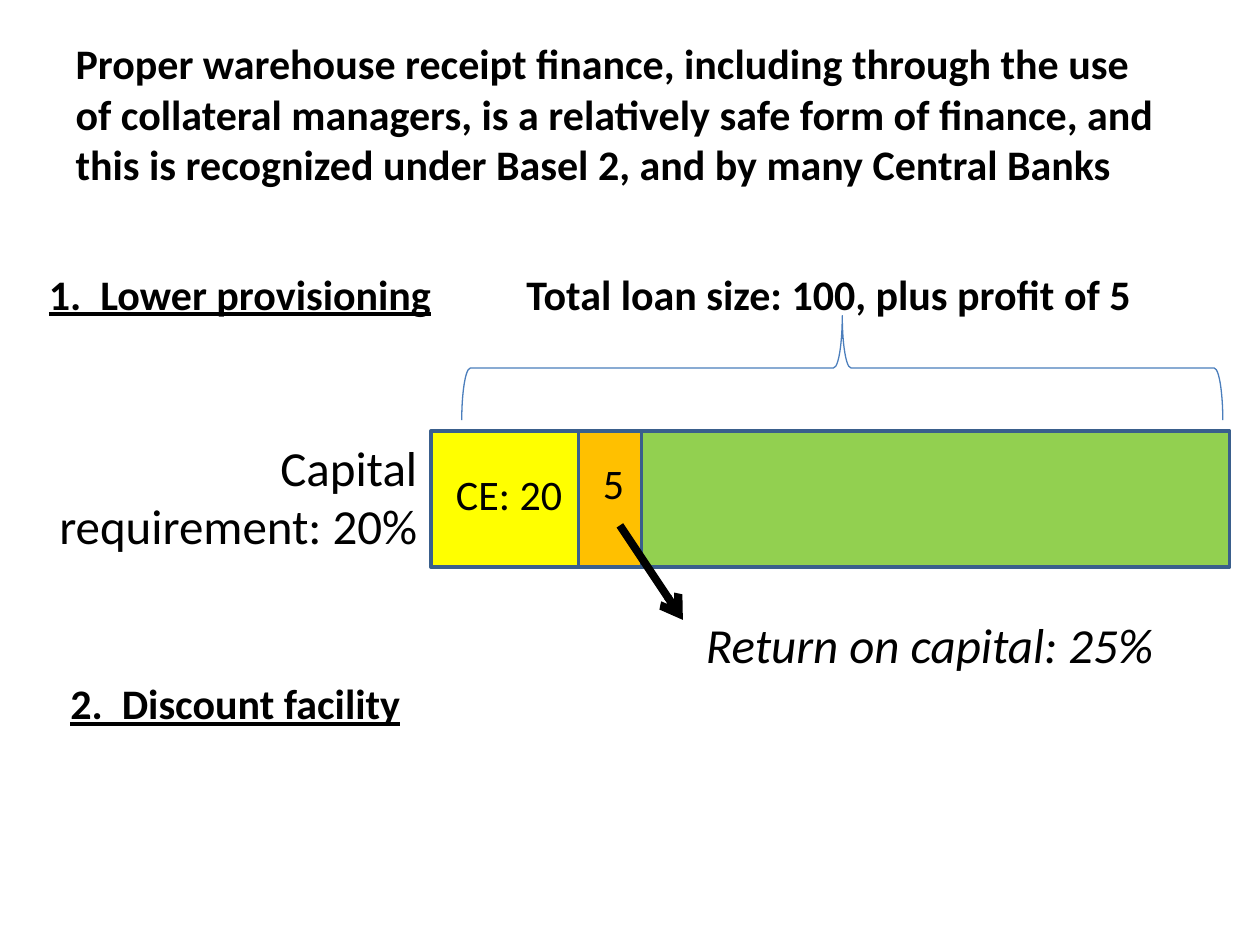
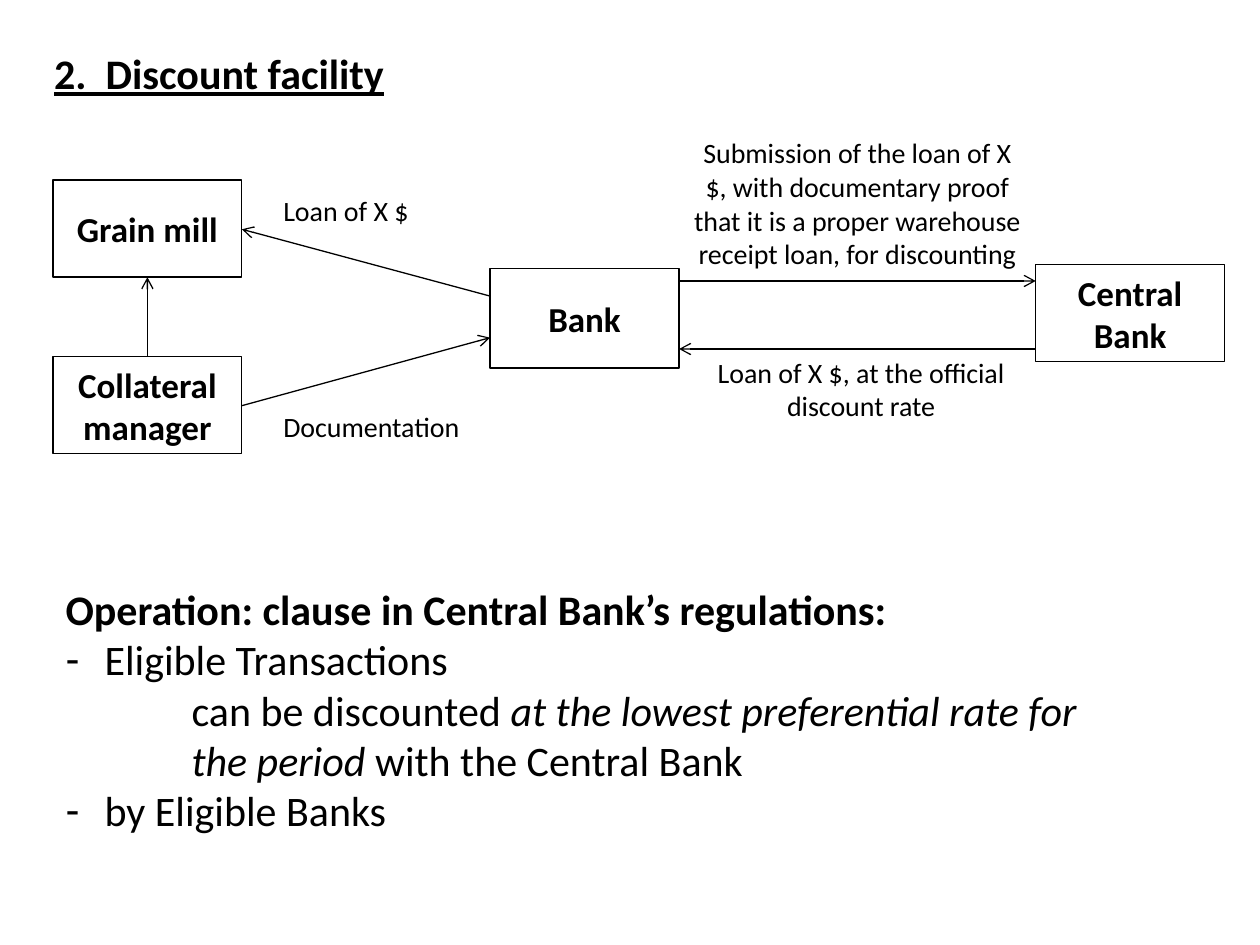
from dataclasses import dataclass

import pptx
import pptx.dml.color
import pptx.enum.shapes
import pptx.enum.text
import pptx.oxml.ns
import pptx.oxml.xmlchemy
import pptx.util
from pptx.util import Inches

FONT = "Calibri"
COLORS = {
    "ink": "000000",
    "equity": "FFFF00",
    "profit": "FFC000",
    "loan": "92D050",
    "bar_line": "3A5F8C",
    "brace": "4B7EBC",
}
ALIGN = pptx.enum.text.PP_ALIGN
ANCHOR = pptx.enum.text.MSO_ANCHOR
SHAPE = pptx.enum.shapes.MSO_SHAPE


@dataclass(frozen=True)
class Box:
    left: float
    top: float
    width: float
    height: float

    def emu(self) -> tuple:
        return tuple(Inches(v) for v in (self.left, self.top, self.width, self.height))


@dataclass(frozen=True)
class TextStyle:
    size: int
    bold: bool = False
    italic: bool = False
    underline: bool = False


@dataclass(frozen=True)
class Label:
    text: str
    box: Box
    style: TextStyle
    align: ALIGN = ALIGN.LEFT


@dataclass(frozen=True)
class Segment:
    width: float
    color: str


@dataclass(frozen=True)
class Arrow:
    start: tuple
    end: tuple
    weight: float = 0.75


@dataclass(frozen=True)
class Clause:
    """A paragraph of (text, italic) phrases; marker is its bullet, if any."""
    phrases: tuple
    margin: float = 0
    marker: str = ""
    bold: bool = False


STATEMENT = TextStyle(24, bold=True)
HEADING = TextStyle(24, bold=True, underline=True)
FIGURE = TextStyle(24)
REMARK = TextStyle(28)
RESULT = TextStyle(28, italic=True)
PARTY = TextStyle(20, bold=True)
FLOW = TextStyle(16)

DISCOUNT_HEADING = "2.  Discount facility"

# Loan bar
BAR_LEFT, BAR_TOP, BAR_HEIGHT = 3.42, 3.42, 1.08
SEGMENTS = (Segment(1.17, "equity"), Segment(0.5, "profit"), Segment(4.67, "loan"))
LOAN_LABELS = (
    Label("Capital requirement: 20%", Box(0.33, 3.42, 3.08, 1.04), REMARK, ALIGN.RIGHT),
    Label("Return on capital: 25%", Box(4, 4.83, 5.25, 0.57), RESULT, ALIGN.RIGHT),
    Label("Total loan size: 100, plus profit of 5", Box(4.08, 2.08, 5.67, 0.5), STATEMENT),
    Label("CE: 20", Box(3.33, 3.67, 1.42, 0.5), FIGURE, ALIGN.CENTER),
    Label("5", Box(4.58, 3.58, 0.58, 0.5), FIGURE, ALIGN.CENTER),
    Label("1.  Lower provisioning", Box(0.29, 2.08, 3.33, 0.5), HEADING),
    Label(DISCOUNT_HEADING, Box(0.46, 5.33, 3.33, 0.5), HEADING),
)

# Discount flow
MILL = Box(0.42, 1.43, 1.5, 0.77)
MANAGER = Box(0.42, 2.83, 1.5, 0.77)
BANK = Box(3.89, 2.13, 1.5, 0.79)
CENTRAL_BANK = Box(8.22, 2.1, 1.5, 0.77)
PARTIES = {
    "Grain mill": MILL,
    "Collateral manager": MANAGER,
    "Bank": BANK,
    "Central Bank": CENTRAL_BANK,
}
LEFT_COLUMN_EDGE = MILL.left + MILL.width
BANK_EDGE = BANK.left + BANK.width
MILL_MIDDLE = MILL.left + MILL.width / 2
FLOWS = (
    Arrow((MILL_MIDDLE, MANAGER.top), (MILL_MIDDLE, MILL.top + MILL.height)),
    Arrow((BANK.left, 2.35), (LEFT_COLUMN_EDGE, 1.82)),
    Arrow((LEFT_COLUMN_EDGE, 3.22), (BANK.left, 2.68)),
    Arrow((BANK_EDGE, 2.23), (CENTRAL_BANK.left, 2.23)),
    Arrow((CENTRAL_BANK.left, 2.77), (BANK_EDGE, 2.77)),
)
FLOW_LABELS = (
    Label("Loan of X $", Box(2.15, 1.49, 1.5, 0.37), FLOW),
    Label("Documentation", Box(2.15, 3.2, 1.82, 0.37), FLOW),
    Label("Submission of the loan of X $, with documentary proof that it is a proper "
          "warehouse receipt loan, for discounting",
          Box(5.39, 1.03, 2.83, 1.18), FLOW, ALIGN.CENTER),
    Label("Loan of X $, at the official discount rate",
          Box(5.42, 2.77, 2.83, 0.64), FLOW, ALIGN.CENTER),
)
CLAUSES = (
    Clause((("Operation: clause in Central Bank’s regulations:", False),), bold=True),
    Clause((("Eligible Transactions", False),), 0.31, "-"),
    Clause((("can be discounted ", False),
            ("at the lowest preferential rate for the period ", True),
            ("with the Central Bank", False)), 1),
    Clause((("by Eligible Banks", False),), 0.31, "-"),
)


def rgb(name: str) -> pptx.dml.color.RGBColor:
    return pptx.dml.color.RGBColor.from_string(COLORS[name])


def place(shape, box: Box) -> None:
    shape.left, shape.top, shape.width, shape.height = box.emu()


def style_paragraph(paragraph, style: TextStyle, align: ALIGN) -> None:
    paragraph.alignment = align
    font = paragraph.font
    font.name = FONT
    font.size = pptx.util.Pt(style.size)
    font.bold = style.bold
    font.underline = style.underline
    if style.italic:
        font.italic = True
    font.color.rgb = rgb("ink")


def set_frame(frame, anchor: ANCHOR = ANCHOR.TOP) -> None:
    frame.word_wrap = True
    frame.auto_size = pptx.enum.text.MSO_AUTO_SIZE.NONE
    frame.vertical_anchor = anchor


def write(frame, text: str, style: TextStyle, align: ALIGN,
          anchor: ANCHOR = ANCHOR.TOP) -> None:
    set_frame(frame, anchor)
    frame.text = text
    style_paragraph(frame.paragraphs[0], style, align)


def add_title(slide, text: str, box: Box, style: TextStyle) -> None:
    place(slide.shapes.title, box)
    write(slide.shapes.title.text_frame, text, style, ALIGN.LEFT)


def add_label(slide, label: Label) -> None:
    frame = slide.shapes.add_textbox(*label.box.emu()).text_frame
    write(frame, label.text, label.style, label.align)


def add_outline(slide, kind: SHAPE, box: Box, line: str, weight: float,
                fill: str = ""):
    shape = slide.shapes.add_shape(kind, *box.emu())
    shape.shadow.inherit = False
    shape.line.color.rgb = rgb(line)
    shape.line.width = pptx.util.Pt(weight)
    if fill:
        shape.fill.solid()
        shape.fill.fore_color.rgb = rgb(fill)
    else:
        shape.fill.background()
    return shape


def add_arrow(slide, arrow: Arrow) -> None:
    ends = [Inches(v) for v in arrow.start + arrow.end]
    connector = slide.shapes.add_connector(
        pptx.enum.shapes.MSO_CONNECTOR.STRAIGHT, *ends)
    connector.line.color.rgb = rgb("ink")
    connector.line.width = pptx.util.Pt(arrow.weight)
    properties = connector._element.spPr
    head = pptx.oxml.xmlchemy.OxmlElement("a:tailEnd")
    head.set("type", "arrow")
    properties.find(pptx.oxml.ns.qn("a:ln")).append(head)
    properties.append(pptx.oxml.xmlchemy.OxmlElement("a:effectLst"))


def set_bullet(paragraph, margin: float, marker: str) -> None:
    properties = paragraph._p.get_or_add_pPr()
    properties.set("marL", str(Inches(margin)))
    properties.set("indent", str(-Inches(margin) if marker else 0))
    bullet = pptx.oxml.xmlchemy.OxmlElement("a:buChar" if marker else "a:buNone")
    if marker:
        bullet.set("char", marker)
    properties.append(bullet)


def add_clauses(slide, box: Box) -> None:
    body = slide.placeholders[1]
    place(body, box)
    frame = body.text_frame
    set_frame(frame)
    for index, clause in enumerate(CLAUSES):
        paragraph = frame.add_paragraph() if index else frame.paragraphs[0]
        set_bullet(paragraph, clause.margin, clause.marker)
        paragraph.space_before = pptx.util.Pt(0)
        style_paragraph(paragraph, TextStyle(24, bold=clause.bold), ALIGN.LEFT)
        for text, italic in clause.phrases:
            run = paragraph.add_run()
            run.text = text
            if italic:
                run.font.italic = True


def build_provisioning(deck) -> None:
    slide = deck.slides.add_slide(deck.slide_layouts[5])
    add_title(slide, "Proper warehouse receipt finance, including through the use of "
              "collateral managers, is a relatively safe form of finance, and this is "
              "recognized under Basel 2, and by many Central Banks",
              Box(0.5, 0.25, 8.83, 1.31), STATEMENT)
    left = BAR_LEFT
    for segment in SEGMENTS:
        add_outline(slide, SHAPE.RECTANGLE, Box(left, BAR_TOP, segment.width, BAR_HEIGHT),
                    "bar_line", 2, segment.color)
        left += segment.width
    brace = add_outline(slide, SHAPE.RIGHT_BRACE, Box(6.27, -0.1, 0.83, 6.04),
                        "brace", 0.75)
    brace.rotation = 270
    for label in LOAN_LABELS:
        add_label(slide, label)
    add_arrow(slide, Arrow((4.92, 4.17), (5.42, 4.92), 4.5))


def build_discount(deck) -> None:
    slide = deck.slides.add_slide(deck.slide_layouts[1])
    add_title(slide, DISCOUNT_HEADING, Box(0.33, 0.33, 3.33, 0.5), HEADING)
    for name, box in PARTIES.items():
        party = add_outline(slide, SHAPE.RECTANGLE, box, "ink", 0.75)
        write(party.text_frame, name, PARTY, ALIGN.CENTER, ANCHOR.MIDDLE)
    for flow in FLOWS:
        add_arrow(slide, flow)
    for label in FLOW_LABELS:
        add_label(slide, label)
    add_clauses(slide, Box(0.42, 4.58, 8.5, 2.12))


def main() -> None:
    deck = pptx.Presentation()
    deck.slide_width, deck.slide_height = Inches(10), Inches(7.5)
    build_provisioning(deck)
    build_discount(deck)
    deck.save("out.pptx")


if __name__ == "__main__":
    main()
